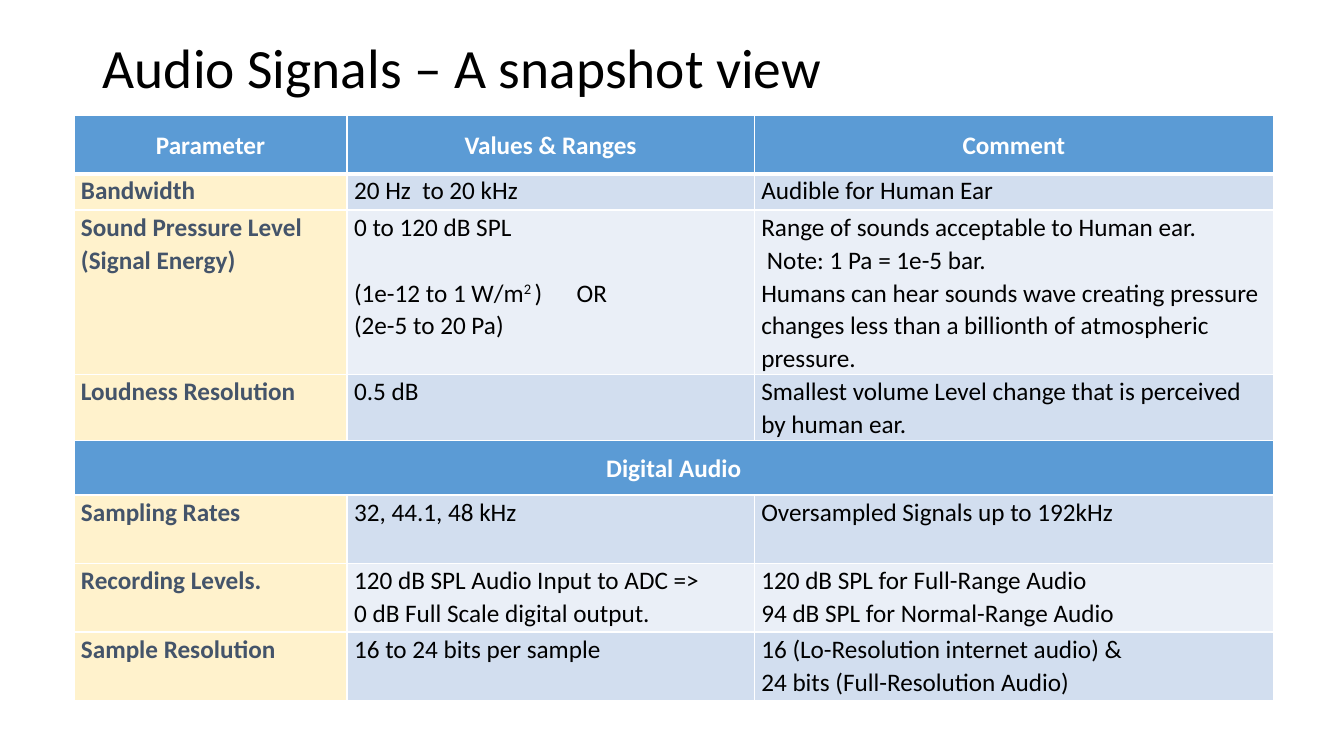
"""Build the audio signals snapshot slide."""
import dataclasses

import lxml.etree
import pptx
import pptx.dml.color
import pptx.enum.text
import pptx.oxml.ns
import pptx.util

Pt = pptx.util.Pt
RGB = pptx.dml.color.RGBColor.from_string
ALIGN = pptx.enum.text.PP_ALIGN
ANCHOR = pptx.enum.text.MSO_ANCHOR
qn = pptx.oxml.ns.qn


@dataclasses.dataclass(frozen=True)
class Theme:
    """Colours, font and type sizes of the slide."""
    font: str = "Calibri"
    title_size: float = 39.6
    cell_size: float = 18
    text: str = "000000"
    inverse: str = "FFFFFF"
    label: str = "44546A"
    heading_fill: str = "5B9BD5"
    label_fill: str = "FFF2CC"
    band_fills: tuple = ("EAEFF7", "D2DEEF")
    border: str = "FFFFFF"


THEME = Theme()
LINE_SPACING = 1.07
LINE_HEIGHT = 23.5
OR_TAB = 159
COLUMN_WIDTHS = (195.12, 290.88, 370.8)
ROW_HEIGHTS = (41.76, 25.92, 117.5, 47, 38.9, 49, 49, 49)
HEADING_ROWS = (0, 4)

PARAMETERS = (
    ("Parameter", "Values & Ranges", "Comment"),
    ("Bandwidth", "20 Hz  to 20 kHz", "Audible for Human Ear"),
    ("Sound Pressure Level\n(Signal Energy)",
     "0 to 120 dB SPL\n(1e-12 to 1 W/m^2 ^)\tOR\n(2e-5 to 20 Pa)",
     "Range of sounds acceptable to Human ear.\n Note: 1 Pa = 1e-5 bar.\n"
     "Humans can hear sounds wave creating pressure changes less than "
     "a billionth of atmospheric pressure."),
    ("Loudness Resolution", "0.5 dB",
     "Smallest volume Level change that is perceived by human ear."),
    ("Digital Audio",),
    ("Sampling Rates", "32, 44.1, 48 kHz", "Oversampled Signals up to 192kHz"),
    ("Recording Levels.",
     "120 dB SPL Audio Input to ADC =>\n0 dB Full Scale digital output.",
     "120 dB SPL for Full-Range Audio\n94 dB SPL for Normal-Range Audio"),
    ("Sample Resolution", "16 to 24 bits per sample",
     "16 (Lo-Resolution internet audio) &\n24 bits (Full-Resolution Audio)"),
)


def apply_format(target, values):
    """Set each attribute named in values on the target."""
    for name, value in values.items():
        setattr(target, name, value)


def format_font(font, size, color, bold=False):
    """Give a font the theme typeface, a size, a colour and a weight."""
    apply_format(font, {"name": THEME.font, "size": Pt(size), "bold": bold})
    font.color.rgb = RGB(color)


def write_line(paragraph, line, color, bold, alignment):
    """Write one line, raising the parts that stand between carets."""
    apply_format(paragraph, {"line_spacing": LINE_SPACING, "alignment": alignment})
    for position, part in enumerate(line.split("^")):
        run = paragraph.add_run()
        run.text = part
        format_font(run.font, THEME.cell_size, color, bold)
        if position % 2:
            run._r.get_or_add_rPr().set("baseline", "30000")


def add_tab_stop(paragraph, position):
    """Add a left tab stop to a paragraph."""
    stops = lxml.etree.SubElement(paragraph._p.get_or_add_pPr(), qn("a:tabLst"))
    lxml.etree.SubElement(stops, qn("a:tab"), pos=str(Pt(position)), algn="l")


def draw_borders(cell, top, bottom):
    """Draw the four cell borders, with given top and bottom widths."""
    properties = cell._tc.get_or_add_tcPr()
    widths = {"a:lnL": 1, "a:lnR": 1, "a:lnT": top, "a:lnB": bottom}
    for index, (side, width) in enumerate(widths.items()):
        line = lxml.etree.Element(qn(side), w=str(Pt(width)))
        fill = lxml.etree.SubElement(line, qn("a:solidFill"))
        lxml.etree.SubElement(fill, qn("a:srgbClr"), val=THEME.border)
        properties.insert(index, line)


def cell_style(row, column):
    """Return the fill, text colour, weight, alignment and anchor of a cell."""
    if row in HEADING_ROWS:
        return THEME.heading_fill, THEME.inverse, True, ALIGN.CENTER, ANCHOR.MIDDLE
    if column == 0:
        return THEME.label_fill, THEME.label, True, ALIGN.LEFT, ANCHOR.TOP
    return THEME.band_fills[row % 2], THEME.text, False, ALIGN.LEFT, ANCHOR.TOP


def fill_cell(cell, row, column, content):
    """Format a table cell and write its lines."""
    fill, color, bold, alignment, anchor = cell_style(row, column)
    apply_format(cell, {"margin_left": Pt(5.04), "margin_right": Pt(5.04),
                        "margin_top": 0, "margin_bottom": 0,
                        "vertical_anchor": anchor})
    cell.fill.solid()
    cell.fill.fore_color.rgb = RGB(fill)
    draw_borders(cell, 3 if row == 1 else 1, 3 if row == 0 else 1)
    for index, line in enumerate(content.split("\n")):
        frame = cell.text_frame
        paragraph = frame.add_paragraph() if index else frame.paragraphs[0]
        write_line(paragraph, line, color, bold, alignment)
        if "\t" in line:
            paragraph.space_before = Pt(LINE_HEIGHT)
            add_tab_stop(paragraph, OR_TAB)


def add_title(slide, wording):
    """Place and format the slide title."""
    title = slide.shapes.title
    apply_format(title, {"left": Pt(66.24), "top": Pt(24.48),
                         "width": Pt(819.36), "height": Pt(51.84)})
    title.text_frame.text = wording
    apply_format(title.text_frame, {"vertical_anchor": ANCHOR.MIDDLE,
                                    "word_wrap": True})
    heading = title.text_frame.paragraphs[0]
    apply_format(heading, {"alignment": ALIGN.LEFT, "line_spacing": 0.9})
    format_font(heading.runs[0].font, THEME.title_size, THEME.text)


def add_parameter_table(slide):
    """Add the table of audio parameters."""
    table = slide.shapes.add_table(
        len(ROW_HEIGHTS), len(COLUMN_WIDTHS), Pt(52.8), Pt(82.4),
        Pt(sum(COLUMN_WIDTHS)), Pt(sum(ROW_HEIGHTS))).table
    for column, width in zip(table.columns, COLUMN_WIDTHS):
        column.width = Pt(width)
    for row, height in enumerate(ROW_HEIGHTS):
        table.rows[row].height = Pt(height)
        contents = PARAMETERS[row]
        if len(contents) == 1:
            table.cell(row, 0).merge(table.cell(row, len(COLUMN_WIDTHS) - 1))
        for column, content in enumerate(contents):
            fill_cell(table.cell(row, column), row, column, content)


def main():
    """Build and save the presentation."""
    deck = pptx.Presentation()
    apply_format(deck, {"slide_width": Pt(960), "slide_height": Pt(540)})
    slide = deck.slides.add_slide(deck.slide_layouts.get_by_name("Title Only"))
    add_title(slide, "Audio Signals – A snapshot view")
    add_parameter_table(slide)
    deck.save("out.pptx")


if __name__ == "__main__":
    main()
